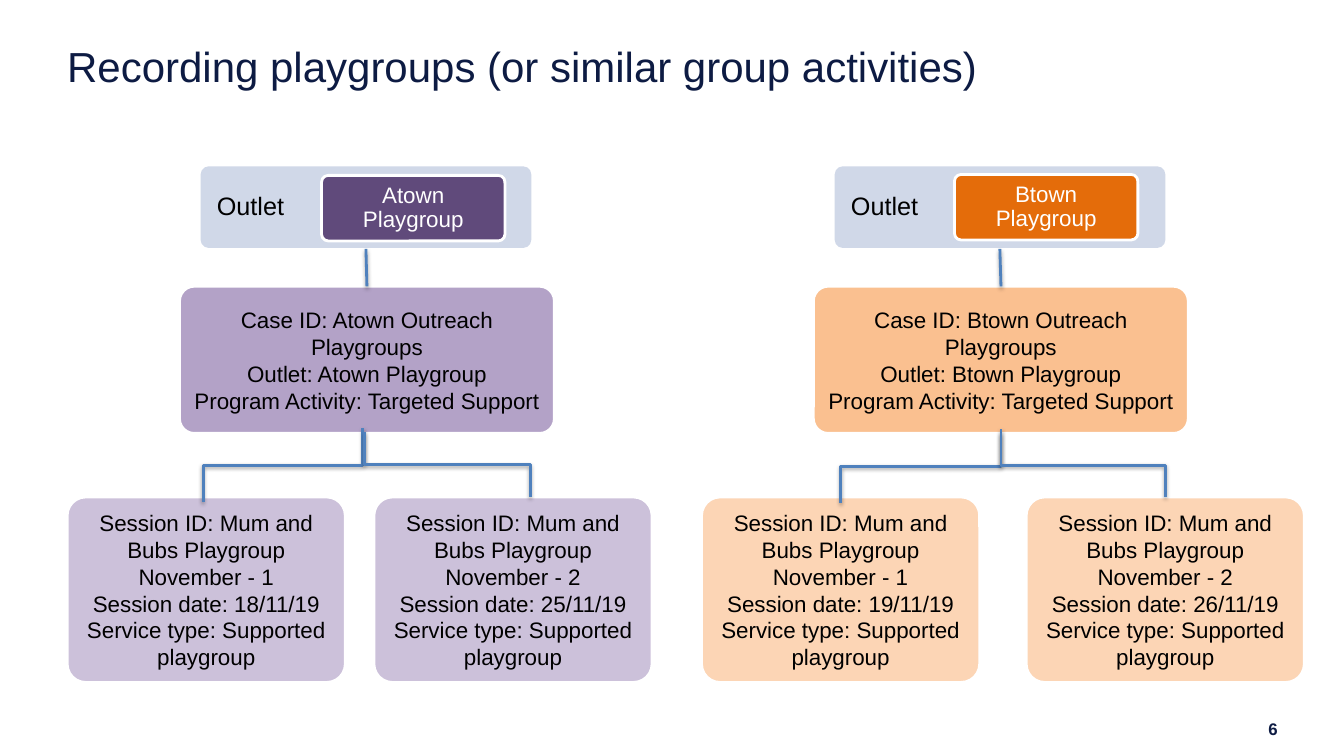
from lxml import etree
from pptx import Presentation
from pptx.dml.color import RGBColor
from pptx.enum.shapes import MSO_CONNECTOR as Link, MSO_SHAPE as Preset
from pptx.enum.text import MSO_ANCHOR as Anchor, PP_ALIGN as Align
from pptx.oxml import parse_xml
from pptx.oxml.ns import nsdecls, qn
from pptx.util import Pt

COLOURS = {
    "navy": "0D1B43", "black": "000000", "white": "FFFFFF",
    "outlet": "D0D8E8", "link": "4F81BD",
    "purple": "604A7B", "purple_mid": "B3A2C7", "purple_pale": "CCC1DA",
    "orange": "E46C0A", "orange_mid": "FAC090", "orange_pale": "FCD5B5",
}

OUTLET_TOP, OUTLET_SIZE = 118.8, (236.2, 58.3)
BADGE_SIZE = (131, 46.8)
CASE_TOP, CASE_SIZE = 204.5, (267.8, 105.1)
SESSION_TOP, SESSION_SIZE = 355, (198.7, 132.5)

TREES = [
    {"town": "Atown", "shade": "purple", "outlet": 143.3, "badge": (229.7, 125.3),
     "case": 128.2, "sessions": [(48, "18/11/19"), (267.1, "25/11/19")],
     "stem": (261.4, 262.1),
     "branches": [(259.2, 306, 145.4, 358.6), (260.6, 308.9, 378.7, 355)]},
    {"town": "Btown", "shade": "orange", "outlet": 596.2, "badge": (681.8, 124.6),
     "case": 581, "sessions": [(501.1, "19/11/19"), (733, "26/11/19")],
     "stem": (714.2, 715),
     "branches": [(715, 306.7, 600.5, 359.3), (715, 309.6, 832.3, 355)]},
]


def colour(name):
    return RGBColor.from_string(COLOURS[name])


def write(shape, lines, size=16, ink="black", bold=False, align=Align.CENTER,
          anchor=Anchor.MIDDLE, inset=6, spacing=None):
    """Fill a shape with one paragraph for each line."""
    frame = shape.text_frame
    frame.word_wrap = True
    frame.vertical_anchor = anchor
    frame.margin_left = frame.margin_right = Pt(inset)
    frame.margin_top = frame.margin_bottom = Pt(inset)
    for index, line in enumerate(lines):
        para = frame.add_paragraph() if index else frame.paragraphs[0]
        para.alignment = align
        para.line_spacing = spacing
        span = para.add_run()
        span.text = line
        span.font.name = "Arial"
        span.font.size = Pt(size)
        span.font.bold = bold
        span.font.color.rgb = colour(ink)


def add_text(page, left, top, width, height, lines, **text_format):
    box = page.shapes.add_textbox(Pt(left), Pt(top), Pt(width), Pt(height))
    write(box, lines, **text_format)


def add_panel(page, left, top, size, fill, lines=(), outline=True, **text_format):
    """Add a rounded box, with a white outline unless told otherwise."""
    width, height = size
    panel = page.shapes.add_shape(Preset.ROUNDED_RECTANGLE, Pt(left), Pt(top),
                                  Pt(width), Pt(height))
    panel.adjustments[0] = 0.1
    panel.shadow.inherit = False
    panel.fill.solid()
    panel.fill.fore_color.rgb = colour(fill)
    if outline:
        panel.line.color.rgb = colour("white")
        panel.line.width = Pt(2)
    else:
        panel.line.fill.background()
    write(panel, lines, **text_format)


def style_link(link):
    """Give a connector its colour, width and soft shadow below."""
    link.line.color.rgb = colour("link")
    link.line.width = Pt(2)
    effects = parse_xml(f"<a:effectLst {nsdecls('a')}/>")
    shadow = etree.SubElement(effects, qn("a:outerShdw"), blurRad=str(Pt(3.1)),
                              dist=str(Pt(1.6)), dir="5400000", rotWithShape="0")
    shade = etree.SubElement(shadow, qn("a:srgbClr"), val=COLOURS["black"])
    etree.SubElement(shade, qn("a:alpha"), val="38000")
    link.element.spPr.append(effects)


def add_stem(page, x1, y1, x2, y2):
    style_link(page.shapes.add_connector(Link.STRAIGHT, Pt(x1), Pt(y1), Pt(x2), Pt(y2)))


def add_branch(page, x1, y1, x2, y2):
    """Add an elbow that leaves and arrives vertically, by turning a level one."""
    across, down = abs(x2 - x1), y2 - y1
    left = (x1 + x2 - down) / 2
    top = (y1 + y2 - across) / 2
    start, end = left, left + down
    degrees = 90
    if x2 > x1:
        start, end = end, start
        degrees = 270
    link = page.shapes.add_connector(Link.ELBOW, Pt(start), Pt(top),
                                     Pt(end), Pt(top + across))
    link.element.spPr.find(qn("a:xfrm")).set("rot", str(degrees * 60000))
    style_link(link)


def add_tree(page, tree):
    """Add an outlet, its case and the two sessions, with their links."""
    town, shade = tree["town"], tree["shade"]
    add_panel(page, tree["outlet"], OUTLET_TOP, OUTLET_SIZE, "outlet", outline=False)
    add_text(page, tree["outlet"], OUTLET_TOP, 71.3, OUTLET_SIZE[1], ["Outlet"],
             size=18, inset=10, spacing=0.9)
    add_panel(page, *tree["badge"], BADGE_SIZE, shade, [f"{town} Playgroup"],
              ink="white", spacing=0.9)
    add_panel(page, tree["case"], CASE_TOP, CASE_SIZE, f"{shade}_mid",
              [f"Case ID: {town} Outreach Playgroups",
               f"Outlet: {town} Playgroup",
               "Program Activity: Targeted Support"])
    for number, (left, date) in enumerate(tree["sessions"], start=1):
        add_panel(page, left, SESSION_TOP, SESSION_SIZE, f"{shade}_pale",
                  [f"Session ID: Mum and Bubs Playgroup November - {number}",
                   f"Session date: {date}",
                   "Service type: Supported playgroup"])
    for branch in tree["branches"]:
        add_branch(page, *branch)
    stem_start, stem_end = tree["stem"]
    add_stem(page, stem_start, 177.8, stem_end, CASE_TOP)


def main():
    deck = Presentation()
    deck.slide_width, deck.slide_height = Pt(960), Pt(540)
    page = deck.slides.add_slide(deck.slide_layouts[6])
    add_text(page, 48, 28.8, 864, 47.5,
             ["Recording playgroups (or similar group activities)"],
             size=30, ink="navy", align=Align.LEFT, anchor=Anchor.TOP, inset=0)
    for tree in TREES:
        add_tree(page, tree)
    add_text(page, 833, 512.6, 85.7, 16.6, ["6"], size=12, ink="navy", bold=True,
             align=Align.RIGHT)
    deck.save("out.pptx")


if __name__ == "__main__":
    main()
